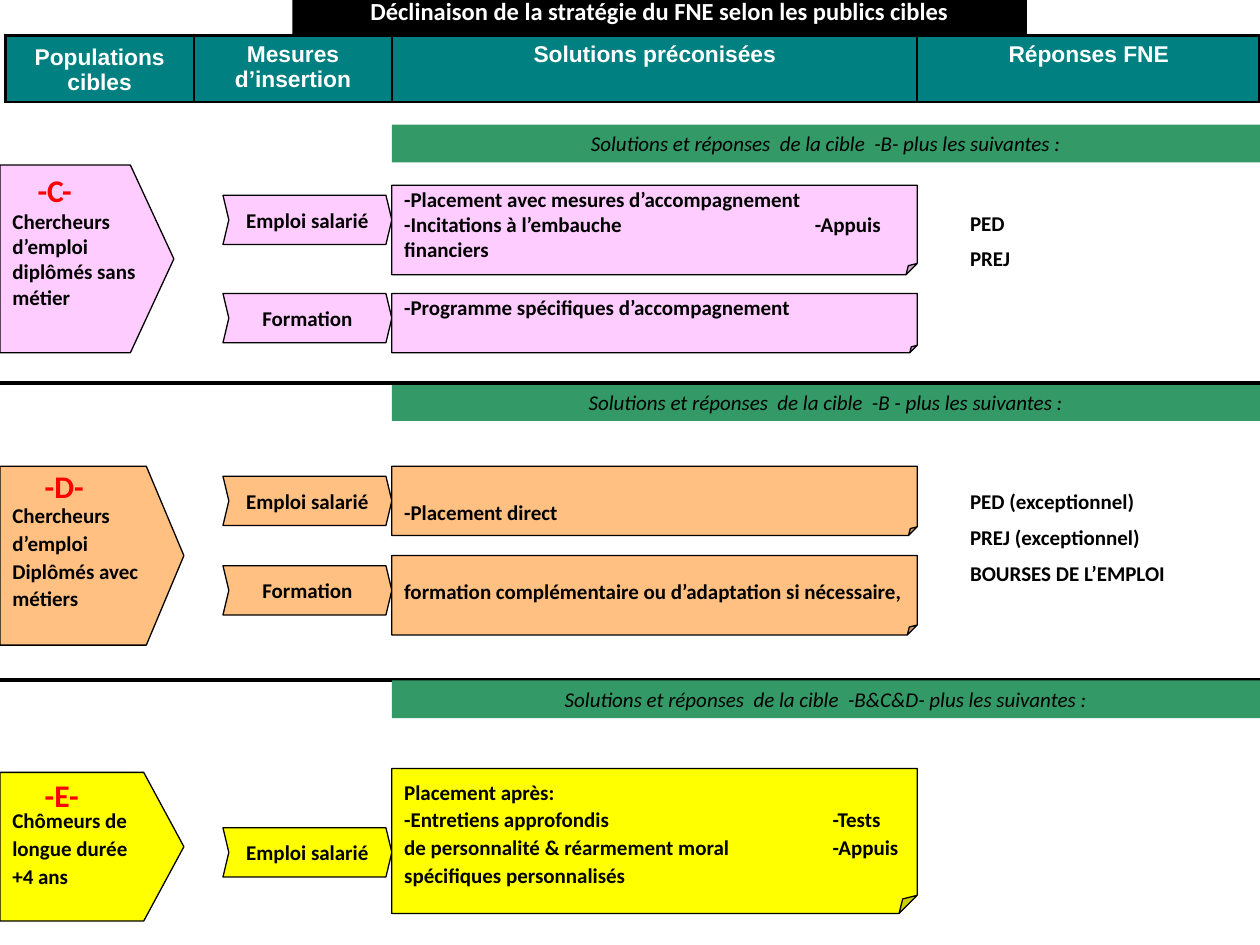
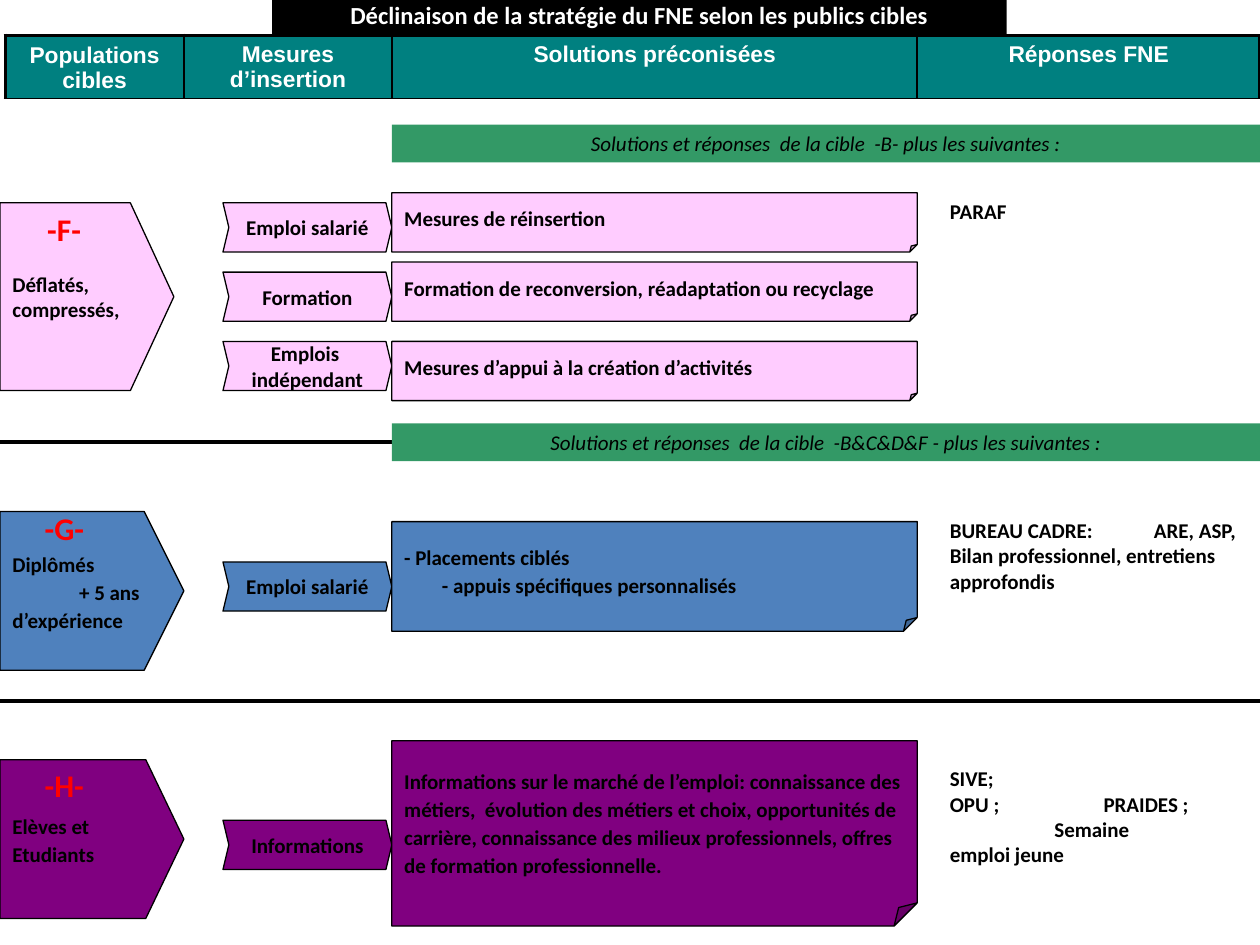
"""Build the two slides that match each target public with its FNE measures."""
from lxml import etree
from pptx import Presentation
from pptx.dml.color import RGBColor
from pptx.enum.shapes import MSO_CONNECTOR, MSO_SHAPE as SHAPE
from pptx.enum.text import MSO_ANCHOR as ANCHOR, PP_ALIGN as ALIGN
from pptx.oxml.ns import qn
from pptx.util import Inches, Pt

COLORS = {"black": "000000", "white": "FFFFFF", "red": "FF0000", "teal": "008080",
          "green": "339966", "pink": "FFCCFF", "orange": "FFC081", "yellow": "FFFF00",
          "blue": "4F81BD", "purple": "800080"}
TITLE = "Déclinaison de la stratégie du FNE selon les publics cibles"
HEADERS = ["Populations cibles", "Mesures d’insertion", "Solutions préconisées", "Réponses FNE"]
BAND = "Solutions et réponses  de la cible  {} plus les suivantes :"
MEASURE_LEFT, MEASURE_WIDTH, MEASURE_HEIGHT = 1.77, 1.34, 0.39
SOLUTION_LEFT, SOLUTION_WIDTH = 3.11, 4.17

SLIDES = [
    {"title": (2.32, -0.03, 5.83, 0.32), "columns": [1.5, 1.57, 4.17, 2.72], "header_height": 0.53,
     "lines_below": [5.4], "lines_above": [3.04],
     "sections": [
         {"color": "pink", "band": ("-B-", 0.99), "label": ("-C-", 0.2, 1.31, 0.55),
          "public": (["Chercheurs d’emploi diplômés sans métier"], 1.31, 1.38, 1.49, 0.25),
          "spacing": 1.0,
          "measures": [(["Emploi salarié"], 1.55), (["Formation"], 2.33)],
          "solutions": [
              (["-Placement avec mesures d’accompagnement",
                ("-Incitations à l’embauche\t-Appuis financiers", 3.26)], 1.47, 0.71, {}),
              (["-Programme spécifiques d’accompagnement"], 2.33, 0.47, {"bottom": 0.25})],
          "answers": (["PED", "PREJ"], 7.6, 1.62, 2.05, 0.6, 6)},
         {"color": "orange", "band": ("-B -", 3.04), "label": (" -D-", 0.2, 3.66, 0.69),
          "public": (["Chercheurs d’emploi", "Diplômés avec métiers"], 3.7, 1.46, 1.42, 0.21),
          "spacing": 1.1,
          "measures": [(["Emploi salarié"], 3.78), (["Formation"], 4.49)],
          "solutions": [
              (["-Placement direct"], 3.7, 0.55, {"top": 0.27}),
              (["formation complémentaire ou d’adaptation si nécessaire,"], 4.41, 0.63, {})],
          "answers": (["PED (exceptionnel)", "PREJ (exceptionnel)", "BOURSES DE L’EMPLOI"],
                      7.6, 3.83, 2.32, 0.9, 6)},
         {"color": "yellow", "band": ("-B&C&D-", 5.4), "label": (" -E-", 0.2, 6.11, 0.67),
          "public": (["Chômeurs de", "longue durée", "+4 ans"], 6.13, 1.46, 1.18, 0.27),
          "spacing": 1.1,
          "measures": [(["Emploi salarié"], 6.57)],
          "solutions": [
              (["Placement après:",
                ("-Entretiens approfondis\t-Tests de personnalité & réarmement moral"
                 "\t-Appuis spécifiques personnalisés", 3.4)], 6.1, 1.15, {})]}]},
    {"title": (2.16, 0, 5.83, 0.36), "columns": [1.42, 1.65, 4.17, 2.72], "header_height": 0.5,
     "lines_below": [3.51, 5.56], "lines_above": [],
     "sections": [
         {"color": "pink", "band": ("-B-", 0.99), "label": (" -F-", 0.22, 1.62, 0.66),
          "public": (["Déflatés,", "compressés,"], 1.61, 1.38, 1.49, 0.25),
          "spacing": 1.0,
          "measures": [(["Emploi salarié"], 1.61), (["Formation"], 2.16),
                       (["Emplois ", "indépendant"], 2.71)],
          "solutions": [
              (["Mesures de réinsertion"], 1.53, 0.47, {}),
              (["Formation de reconversion, réadaptation ou recyclage"], 2.08, 0.47, {}),
              (["Mesures d’appui à la création d’activités"], 2.71, 0.47, {})],
          "answers": (["PARAF"], 7.44, 1.53, 2.28, 0.3, 0)},
         {"color": "blue", "band": ("-B&C&D&F -", 3.36), "label": (" -G-", 0.2, 3.99, 0.7),
          "public": (["Diplômés", ("\t+ 5 ans", 0.53), "d’expérience"], 4.06, 1.46, 1.26, 0.25),
          "spacing": 1.1,
          "measures": [(["Emploi salarié"], 4.46)],
          "solutions": [
              (["- Placements ciblés", ("\t- appuis spécifiques personnalisés", 0.3)],
               4.14, 0.87, {})],
          "answers": ([("BUREAU CADRE:\tARE, ASP, Bilan professionnel, entretiens approfondis", 1.62)],
                      7.44, 4.06, 2.56, 0.9, 0)},
         {"color": "purple", "label": (" -H-", 0.2, 6.03, 0.69),
          "public": (["Elèves et Etudiants"], 6.03, 1.46, 1.26, 0.24),
          "spacing": 1.1,
          "measures": [(["Informations"], 6.51)],
          "solutions": [
              (["Informations sur le marché de l’emploi: connaissance des métiers,  évolution des "
                "métiers et choix, opportunités de carrière, connaissance des milieux "
                "professionnels, offres de formation professionnelle."], 5.88, 1.47, {})],
          "answers": (["SIVE;", ("OPU ;\tPRAIDES ;", 1.22), ("\tSemaine", 0.83), "emploi jeune"],
                      7.44, 6.03, 2.13, 0.9, 0)}]},
]


def rgb(name):
    """Return the named colour."""
    return RGBColor.from_string(COLORS[name])


def write(frame, lines, size=12, font="Calibri", color="black", bold=True, italic=False,
          align=ALIGN.LEFT, spacing=1.0, gap=0):
    """Fill a text frame with one paragraph per line, given as text or (text, tab stop)."""
    for index, line in enumerate(lines):
        text, tab = line if isinstance(line, tuple) else (line, None)
        para = frame.add_paragraph() if index else frame.paragraphs[0]
        para.alignment, para.line_spacing = align, spacing
        if index and gap:
            para.space_before = Pt(gap)
        if tab:
            tabs = etree.SubElement(para._p.get_or_add_pPr(), qn("a:tabLst"))
            etree.SubElement(tabs, qn("a:tab"), pos=str(Inches(tab)), algn="l")
        span = para.add_run()
        span.text = text
        span.font.size, span.font.name = Pt(size), font
        span.font.bold, span.font.italic = bold, italic
        span.font.color.rgb = rgb(color)


def fold_corner(box, fold):
    """Turn a rectangle into a sheet with a folded corner."""
    geometry = box._element.spPr.find(qn("a:prstGeom"))
    geometry.set("prst", "foldedCorner")
    guides = geometry.find(qn("a:avLst"))
    etree.SubElement(guides, qn("a:gd"), name="adj", fmla=f"val {round(fold * 100000)}")


def add_box(page, lines, place, kind=None, fill=None, outline=True, adjust=None, fold=None,
            wrap=True, anchor=ANCHOR.MIDDLE, side=0.1, top=0.05, bottom=0.05, **style):
    """Add a preset shape, or a plain text box when no kind is given."""
    place = [Inches(length) for length in place]
    if kind is None:
        box = page.shapes.add_textbox(*place)
    else:
        box = page.shapes.add_shape(kind, *place)
        box.shadow.inherit = False
        box.fill.solid()
        box.fill.fore_color.rgb = rgb(fill)
        if outline:
            box.line.color.rgb, box.line.width = rgb("black"), Pt(0.75)
        else:
            box.line.fill.background()
    if adjust is not None:
        box.adjustments[0] = adjust
    if fold is not None:
        fold_corner(box, fold)
    frame = box.text_frame
    frame.word_wrap, frame.vertical_anchor = wrap, anchor
    frame.margin_left = frame.margin_right = Inches(side)
    frame.margin_top, frame.margin_bottom = Inches(top), Inches(bottom)
    write(frame, lines, **style)


def add_divider(page, y):
    """Draw a full-width rule."""
    line = page.shapes.add_connector(MSO_CONNECTOR.STRAIGHT, 0, Inches(y), Inches(10), Inches(y))
    line.line.color.rgb, line.line.width = rgb("black"), Pt(2.25)
    etree.SubElement(line._element.spPr, qn("a:effectLst"))


def set_borders(cell, widths):
    """Give a cell black borders, with widths in points by side."""
    properties = cell._tc.get_or_add_tcPr()
    for index, (side, width) in enumerate(widths.items()):
        border = etree.Element(qn(f"a:ln{side}"), w=str(Pt(width)))
        fill = etree.SubElement(border, qn("a:solidFill"))
        etree.SubElement(fill, qn("a:srgbClr"), val=COLORS["black"])
        properties.insert(index, border)


def add_header(page, columns, height):
    """Add the row of column headings."""
    table = page.shapes.add_table(1, len(columns), Inches(0.04), Inches(0.28),
                                  Inches(sum(columns)), Inches(height)).table
    table.rows[0].height = Inches(height)
    last = len(columns) - 1
    for index, (width, heading) in enumerate(zip(columns, HEADERS)):
        table.columns[index].width = Inches(width)
        cell = table.cell(0, index)
        cell.fill.solid()
        cell.fill.fore_color.rgb = rgb("teal")
        cell.vertical_anchor = ANCHOR.TOP if index else ANCHOR.MIDDLE
        cell.margin_bottom = Inches(0.03)
        set_borders(cell, {"L": 1 if index else 2, "R": 2 if index == last else 1, "T": 2, "B": 1})
        write(cell.text_frame, [heading], size=13, font="Arial", color="white", align=ALIGN.CENTER)


def add_section(page, section):
    """Add one target public with its measures, solutions and answers."""
    color, spacing = section["color"], section["spacing"]
    lines, top, width, height, point = section["public"]
    add_box(page, lines, (0, top, width, height), SHAPE.PENTAGON, color, adjust=point,
            spacing=spacing)
    for lines, top in section["measures"]:
        add_box(page, lines, (MEASURE_LEFT, top, MEASURE_WIDTH, MEASURE_HEIGHT), SHAPE.CHEVRON,
                color, adjust=0.12, wrap=False, align=ALIGN.CENTER)
    for lines, top, height, insets in section["solutions"]:
        add_box(page, lines, (SOLUTION_LEFT, top, SOLUTION_WIDTH, height), SHAPE.RECTANGLE,
                color, fold=0.125, spacing=spacing, **insets)
    if "band" in section:
        target, top = section["band"]
        add_box(page, [BAND.format(target)], (SOLUTION_LEFT, top, 10 - SOLUTION_LEFT, 0.3),
                SHAPE.RECTANGLE, "green", outline=False, anchor=ANCHOR.TOP, bold=False,
                italic=True, align=ALIGN.CENTER)
    if "answers" in section:
        lines, *place, gap = section["answers"]
        add_box(page, lines, place, anchor=ANCHOR.TOP, gap=gap)
    label, left, top, width = section["label"]
    add_box(page, [label], (left, top, width, 0.4), wrap=False, anchor=ANCHOR.TOP, size=18,
            color="red")


def main():
    """Build and save the deck."""
    deck = Presentation()
    deck.slide_width, deck.slide_height = Inches(10), Inches(7.5)
    for content in SLIDES:
        page = deck.slides.add_slide(deck.slide_layouts[6])
        add_box(page, [TITLE], content["title"], SHAPE.RECTANGLE, "black", outline=False,
                wrap=False, anchor=ANCHOR.TOP, side=0, top=0, bottom=0, size=14, color="white",
                align=ALIGN.CENTER)
        add_header(page, content["columns"], content["header_height"])
        for y in content["lines_below"]:
            add_divider(page, y)
        for section in content["sections"]:
            add_section(page, section)
        for y in content["lines_above"]:
            add_divider(page, y)
    deck.save("out.pptx")


if __name__ == "__main__":
    main()
